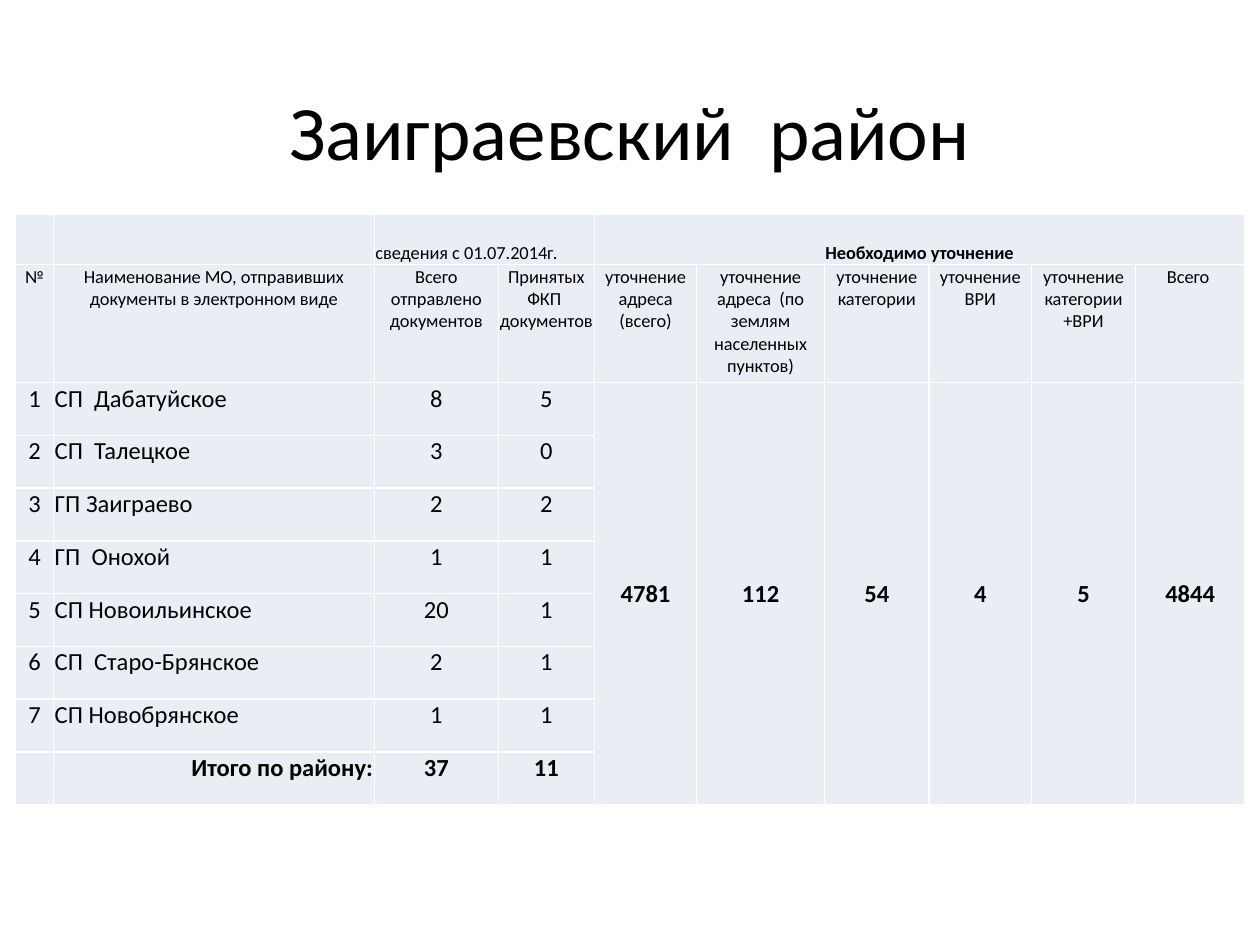
import pptx
import pptx.util
import pptx.dml.color
import pptx.enum.text
from dataclasses import dataclass

Pt = pptx.util.Pt
RGB = pptx.dml.color.RGBColor
ALIGN = pptx.enum.text.PP_ALIGN
ANCHOR = pptx.enum.text.MSO_ANCHOR


@dataclass(frozen=True)
class Theme:
    font: str = "Calibri"
    text: str = "000000"
    cell: str = "E9EDF4"
    title_size: float = 44
    body_size: float = 14
    head_size: float = 10.5
    inset: float = 0.7


class SlideBuilder:
    def __init__(self, prs, theme):
        self.theme = theme
        self.slide = prs.slides.add_slide(prs.slide_layouts[0])
        # The subtitle is not used
        sub = self.slide.placeholders[1]._element
        sub.getparent().remove(sub)

    def add_text(self, tf, text, size, align, bold=False):
        p = tf.paragraphs[0]
        p.alignment = align
        r = p.add_run()
        r.text = text
        r.font.name = self.theme.font
        r.font.size = Pt(size)
        r.font.bold = bold
        r.font.color.rgb = RGB.from_string(self.theme.text)

    def title(self, text, left, top, width, height):
        sp = self.slide.shapes.title
        sp.left, sp.top, sp.width, sp.height = map(Pt, (left, top, width, height))
        tf = sp.text_frame
        tf.vertical_anchor = ANCHOR.MIDDLE
        self.add_text(tf, text, self.theme.title_size, ALIGN.CENTER)

    def table(self, left, top, widths, heights):
        frame = self.slide.shapes.add_table(
            len(heights), len(widths), Pt(left), Pt(top),
            Pt(sum(widths)), Pt(sum(heights)))
        tbl = frame.table
        tbl.first_row = tbl.horz_banding = False
        for col, width in zip(tbl.columns, widths):
            col.width = Pt(width)
        for row, height in zip(tbl.rows, heights):
            row.height = Pt(height)
        for cell in tbl.iter_cells():
            cell.fill.solid()
            cell.fill.fore_color.rgb = RGB.from_string(self.theme.cell)
            cell.margin_left = cell.margin_right = cell.margin_top = Pt(self.theme.inset)
            cell.margin_bottom = 0
        return tbl

    def cell(self, cell, text, size, align=ALIGN.CENTER, anchor=ANCHOR.TOP, bold=False):
        cell.vertical_anchor = anchor
        self.add_text(cell.text_frame, text, size, align, bold)


HEADERS = [
    "№", "Наименование МО, отправивших документы в электронном виде",
    "Всего отправлено документов", "Принятых ФКП  документов",
    "уточнение адреса (всего)", "уточнение адреса  (по землям населенных пунктов)",
    "уточнение категории", "уточнение ВРИ", "уточнение категории +ВРИ", "Всего ",
]
SETTLEMENTS = [
    ("СП  Дабатуйское", 8, 5),
    ("СП  Талецкое", 3, 0),
    ("ГП Заиграево", 2, 2),
    ("ГП  Онохой", 1, 1),
    ("СП Новоильинское", 20, 1),
    ("СП  Старо-Брянское", 2, 1),
    ("СП Новобрянское", 1, 1),
]
DISTRICT_TOTALS = (37, 11)
CLARIFICATIONS = [4781, 112, 54, 4, 5, 4844]
COL_WIDTHS = [21.7, 183.3, 70.9, 54.9, 58.5, 73, 59.8, 58.5, 59.5, 62.5]
ROW_HEIGHTS = [28.5, 67.5] + [30.15] * 8


def main():
    prs = pptx.Presentation()
    prs.slide_width, prs.slide_height = Pt(720), Pt(540)
    theme = Theme()
    s = SlideBuilder(prs, theme)
    head, body = theme.head_size, theme.body_size

    s.title("Заиграевский  район", 54, 26, 612, 96.5)
    tbl = s.table(8.9, 122.7, COL_WIDTHS, ROW_HEIGHTS)
    last = len(ROW_HEIGHTS) - 1

    # Group headings
    tbl.cell(0, 2).merge(tbl.cell(0, 3))
    tbl.cell(0, 4).merge(tbl.cell(0, 9))
    s.cell(tbl.cell(0, 2), "сведения с 01.07.2014г.", head, ALIGN.LEFT, ANCHOR.BOTTOM)
    s.cell(tbl.cell(0, 4), "Необходимо уточнение", head, anchor=ANCHOR.BOTTOM, bold=True)

    # Column headings
    for c, text in enumerate(HEADERS):
        s.cell(tbl.cell(1, c), text, head)

    # Settlements
    for number, (name, sent, accepted) in enumerate(SETTLEMENTS, 1):
        for c, value in enumerate((number, name, sent, accepted)):
            align = ALIGN.LEFT if c == 1 else ALIGN.CENTER
            s.cell(tbl.cell(number + 1, c), str(value), body, align)

    # District totals
    s.cell(tbl.cell(last, 1), "Итого по району:", body, ALIGN.RIGHT, bold=True)
    for c, value in enumerate(DISTRICT_TOTALS, 2):
        s.cell(tbl.cell(last, c), str(value), body, bold=True)

    # Clarifications for the whole district
    for c, value in enumerate(CLARIFICATIONS, 4):
        tbl.cell(2, c).merge(tbl.cell(last, c))
        s.cell(tbl.cell(2, c), str(value), body, anchor=ANCHOR.MIDDLE, bold=True)

    prs.save("out.pptx")


if __name__ == "__main__":
    main()
